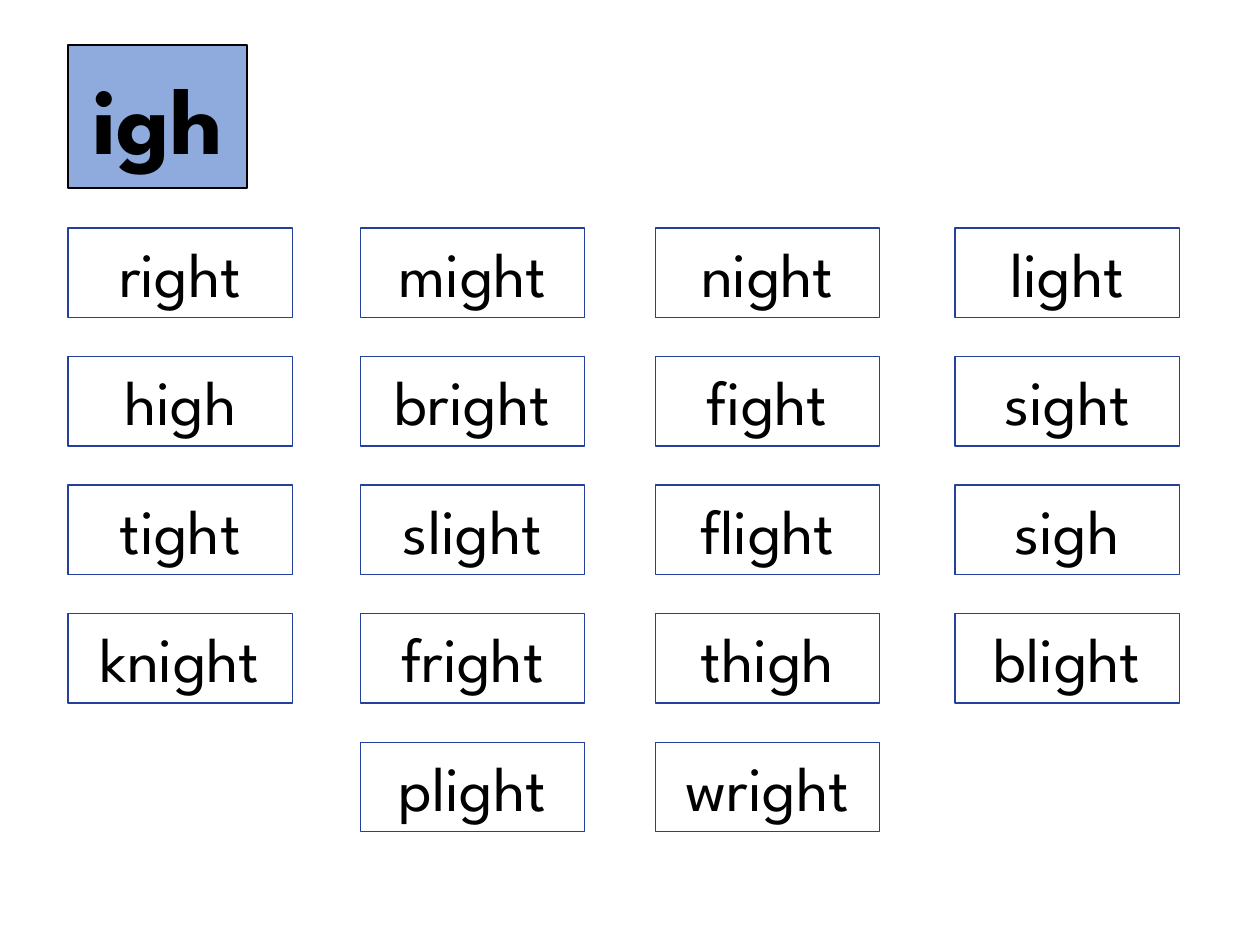
from pptx import Presentation
from pptx import util as u
from pptx.dml.color import RGBColor
from pptx.enum import text

FONT = "League Spartan"
BLACK = RGBColor(0x00, 0x00, 0x00)
BORDER_BLUE = RGBColor(0x22, 0x40, 0x9C)
TITLE_BLUE = RGBColor(0x8F, 0xAA, 0xDC)

CARD_WIDTH, CARD_HEIGHT = 1.78, 0.71
COLUMN_LEFTS = (0.54, 2.86, 5.2, 7.58)
FIRST_TOP, ROW_STEP = 1.81, 1.02
WORD_ROWS = (
    ("right", "might", "night", "light"),
    ("high", "bright", "fight", "sight"),
    ("tight", "slight", "flight", "sigh"),
    ("knight", "fright", "thigh", "blight"),
    (None, "plight", "wright", None),
)


class WordSlide:
    def __init__(self, presentation):
        self.slide = presentation.slides.add_slide(presentation.slide_layouts[5])

    def style(self, shape, words, size, line_color, line_width, bold=False):
        """Set the outline and the centred text of a box."""
        shape.line.color.rgb = line_color
        shape.line.width = u.Pt(line_width)
        frame = shape.text_frame
        frame.text = words
        frame.word_wrap = True
        paragraph = frame.paragraphs[0]
        paragraph.alignment = text.PP_ALIGN.CENTER
        font = paragraph.runs[0].font
        font.name = FONT
        font.size = u.Pt(size)
        font.bold = bold
        font.color.rgb = BLACK

    def title(self, words, left, top, width, height):
        shape = self.slide.shapes.title
        shape.left, shape.top = u.Inches(left), u.Inches(top)
        shape.width, shape.height = u.Inches(width), u.Inches(height)
        shape.fill.solid()
        shape.fill.fore_color.rgb = TITLE_BLUE
        self.style(shape, words, 54, BLACK, 1, bold=True)
        shape.text_frame.auto_size = text.MSO_AUTO_SIZE.NONE
        shape.text_frame.vertical_anchor = text.MSO_ANCHOR.MIDDLE

    def card(self, word, left, top):
        shape = self.slide.shapes.add_textbox(
            u.Inches(left), u.Inches(top), u.Inches(CARD_WIDTH), u.Inches(CARD_HEIGHT)
        )
        self.style(shape, word, 36, BORDER_BLUE, 0.75)
        shape.text_frame.auto_size = text.MSO_AUTO_SIZE.SHAPE_TO_FIT_TEXT


def main():
    presentation = Presentation()
    presentation.slide_width = u.Inches(10)
    presentation.slide_height = u.Inches(7.5)

    word_slide = WordSlide(presentation)
    word_slide.title("igh", 0.54, 0.36, 1.42, 1.13)
    for row, words in enumerate(WORD_ROWS):
        for left, word in zip(COLUMN_LEFTS, words):
            if word:
                word_slide.card(word, left, FIRST_TOP + row * ROW_STEP)

    presentation.save("out.pptx")


if __name__ == "__main__":
    main()
